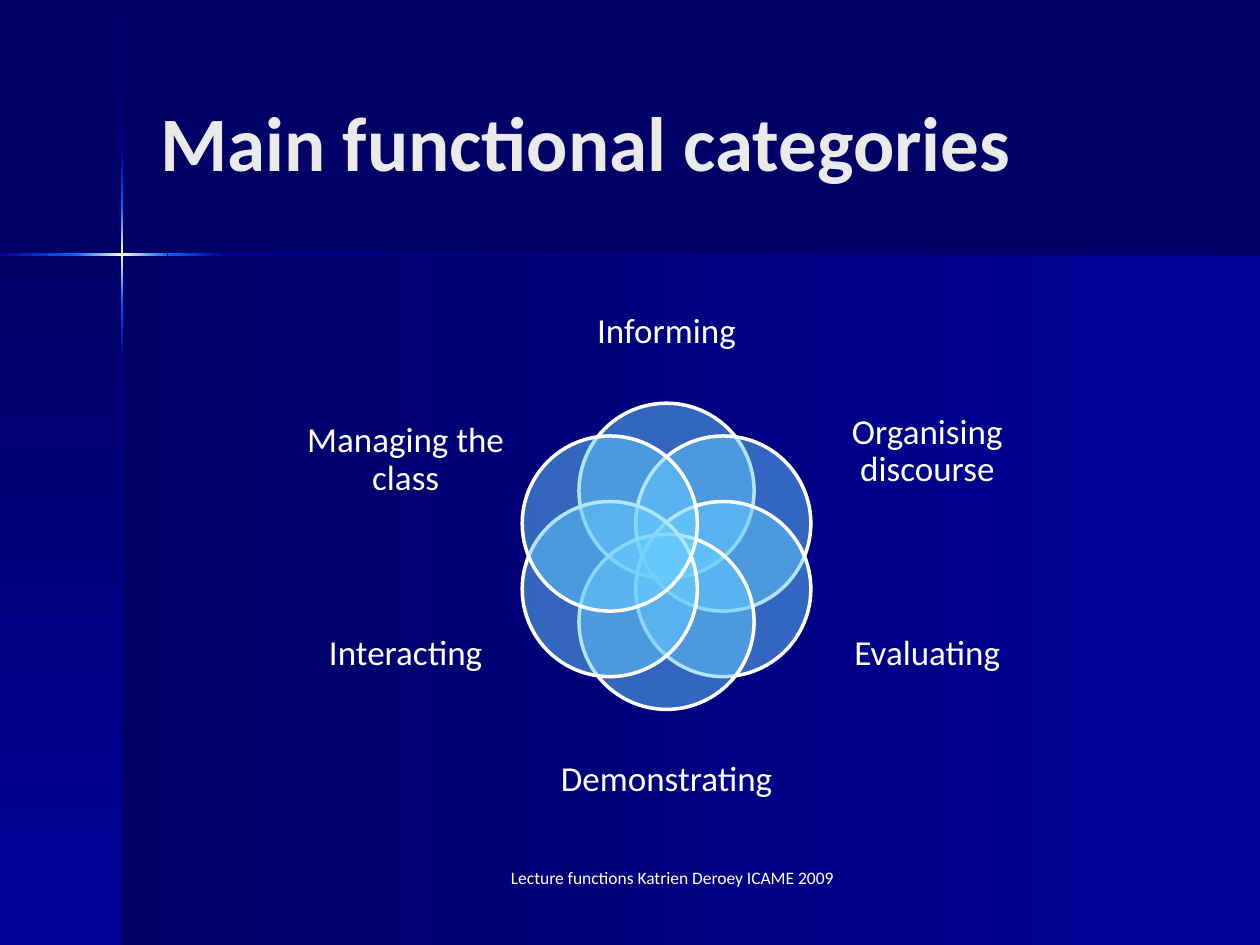
from copy import deepcopy
from math import cos, radians, sin

from lxml import etree
from pptx import Presentation
from pptx.dml.color import RGBColor
from pptx.enum.shapes import MSO_SHAPE as SHAPE
from pptx.enum.text import MSO_ANCHOR as ANCHOR, MSO_AUTO_SIZE as AUTO_SIZE, PP_ALIGN as ALIGN
from pptx.oxml.ns import qn
from pptx.util import Inches, Pt

NAVY = RGBColor(0x00, 0x00, 0x66)
BLUE = RGBColor(0x00, 0x00, 0x99)
BRIGHT = RGBColor(0x00, 0x66, 0xFF)
CREAM = RGBColor(0xFF, 0xFF, 0xCC)
SKY = RGBColor(0x66, 0xCC, 0xFF)
PALE = RGBColor(0xEA, 0xEA, 0xEA)
WHITE = RGBColor(0xFF, 0xFF, 0xFF)
FONT = "Calibri"

# Clockwise from the top: text, label offset from the petal centre, label size
CATEGORIES = [
    ("Informing", 0, -1.78, 1.73, 0.94),
    ("Organising discourse", 2.07, -0.83, 1.64, 1.03),
    ("Evaluating", 2.07, 0.78, 1.64, 1.16),
    ("Demonstrating", 0, 1.78, 1.73, 0.94),
    ("Interacting", -2.07, 0.78, 1.64, 1.16),
    ("Managing the class", -2.07, -0.76, 1.64, 1.16),
]


def write_text(shape, text, size, color=WHITE, bold=False, align=ALIGN.CENTER,
               anchor=ANCHOR.TOP, inset=None, line_spacing=None):
    frame = shape.text_frame
    frame.word_wrap = True
    frame.auto_size = AUTO_SIZE.NONE
    frame.vertical_anchor = anchor
    if inset is not None:
        frame.margin_left = frame.margin_right = inset
        frame.margin_top = frame.margin_bottom = inset
    paragraph = frame.paragraphs[0]
    paragraph.alignment = align
    paragraph.line_spacing = line_spacing
    run = paragraph.add_run()
    run.text = text
    run.font.name = FONT
    run.font.size = Pt(size)
    run.font.bold = bold
    run.font.color.rgb = color


def add_band(slide, left, top, width, height, colors, vertical=False):
    """Add a borderless rectangle with a gradient of two or three colours."""
    band = slide.shapes.add_shape(SHAPE.RECTANGLE, Inches(left), Inches(top),
                                  Inches(width), Inches(height))
    band.shadow.inherit = False
    band.line.fill.background()
    band.fill.gradient()
    band.fill.gradient_angle = 270 if vertical else 0
    stop_list = next(band.element.iter(qn("a:gsLst")))
    if len(colors) == 3:
        stop_list.insert(1, deepcopy(stop_list[0]))
    for index, (stop, color) in enumerate(zip(band.fill.gradient_stops, colors)):
        stop.position = index / (len(colors) - 1)
        stop.color.rgb = color


def add_backdrop(slide, width, height):
    slide.background.fill.solid()
    slide.background.fill.fore_color.rgb = NAVY

    # Panels below and left of the crossing lines
    cross_x, cross_y, thickness = 0.97, 2.02, 0.02
    panel_height = height - cross_y
    add_band(slide, cross_x, cross_y, width - cross_x, panel_height, (NAVY, BLUE))
    add_band(slide, 0, cross_y, cross_x, panel_height, (NAVY, BLUE), vertical=True)

    # Line segments: start, end, colours
    flare = (BRIGHT, CREAM, BRIGHT)
    vertical_segments = [
        (0.01, 1.21, (NAVY, BLUE)),
        (2.82, height, (BLUE, NAVY)),
        (2.38, 2.82, (BRIGHT, BLUE)),
        (1.21, 1.65, (BLUE, BRIGHT)),
        (1.65, 2.38, flare),
    ]
    horizontal_segments = [
        (1.77, width, (BLUE, NAVY)),
        (0, 0.61, (BLUE, BRIGHT)),
        (1.33, 1.77, (BRIGHT, BLUE)),
        (0.6, 1.33, flare),
    ]
    for start, end, colors in vertical_segments:
        add_band(slide, cross_x - thickness / 2, start, thickness, end - start,
                 colors, vertical=True)
    for start, end, colors in horizontal_segments:
        add_band(slide, start, cross_y - thickness / 2, end - start, thickness, colors)


def place_title(slide, left, top, width, height):
    title = slide.shapes.title
    title.left, title.top = Inches(left), Inches(top)
    title.width, title.height = Inches(width), Inches(height)
    write_text(title, "Main functional categories", 44, color=PALE, bold=True,
               align=ALIGN.LEFT, anchor=ANCHOR.MIDDLE)
    # Bring the title in front of the backdrop
    title.element.getparent().append(title.element)


def add_text(slide, text, left, top, width, height, **text_format):
    box = slide.shapes.add_textbox(Inches(left), Inches(top), Inches(width), Inches(height))
    write_text(box, text, **text_format)


def add_petal(slide, center_x, center_y, diameter):
    petal = slide.shapes.add_shape(
        SHAPE.OVAL, Inches(center_x - diameter / 2), Inches(center_y - diameter / 2),
        Inches(diameter), Inches(diameter))
    petal.shadow.inherit = False
    petal.fill.solid()
    petal.fill.fore_color.rgb = SKY
    color = petal.element.spPr.find(qn("a:solidFill"))[0]
    etree.SubElement(color, qn("a:alpha")).set("val", "50000")
    petal.line.color.rgb = WHITE
    petal.line.width = Pt(2)


def add_venn(slide, left, top, width, height):
    center_x, center_y = left + width / 2, top + height / 2
    ring_radius, diameter = 0.52, 1.39
    for index, (text, dx, dy, label_width, label_height) in enumerate(CATEGORIES):
        angle = radians(360 / len(CATEGORIES) * index - 90)
        add_petal(slide, center_x + ring_radius * cos(angle),
                  center_y + ring_radius * sin(angle), diameter)
        add_text(slide, text, center_x + dx - label_width / 2,
                 center_y + dy - label_height / 2, label_width, label_height,
                 size=20, anchor=ANCHOR.MIDDLE, inset=0, line_spacing=0.9)


def main():
    presentation = Presentation()
    presentation.slide_width, presentation.slide_height = Inches(10), Inches(7.5)
    slide = presentation.slides.add_slide(presentation.slide_layouts[5])
    add_backdrop(slide, 10, 7.5)
    place_title(slide, 1.17, 0.33, 8.25, 1.57)
    add_venn(slide, 2.4, 2.17, 5.78, 4.49)
    # Footer
    add_text(slide, "Lecture functions Katrien Deroey ICAME 2009", 3.75, 6.83, 3.17, 0.5, size=10)
    presentation.save("out.pptx")


if __name__ == "__main__":
    main()
